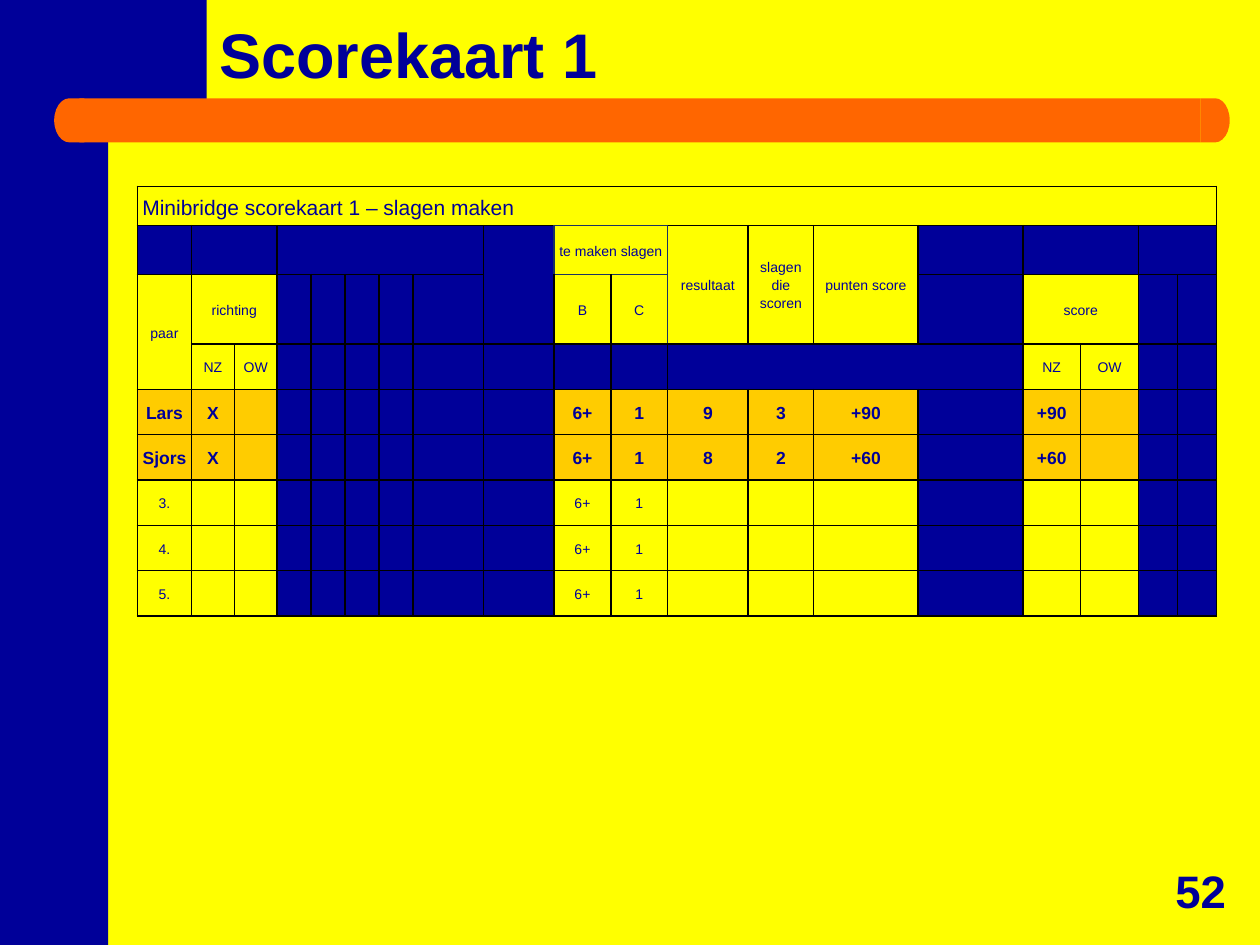
from lxml.etree import fromstring
from pptx import Presentation
from pptx.dml.color import RGBColor
from pptx.enum.shapes import MSO_SHAPE as Shape
from pptx.enum.text import MSO_ANCHOR as Anchor, MSO_AUTO_SIZE as Fit, PP_ALIGN as Align
from pptx.oxml.ns import nsdecls
from pptx.util import Inches, Pt

NAVY = RGBColor(0x00, 0x00, 0x99)
YELLOW = RGBColor(0xFF, 0xFF, 0x00)
ORANGE = RGBColor(0xFF, 0x66, 0x00)
GOLD = RGBColor(0xFF, 0xCC, 0x00)
BLACK = RGBColor(0x00, 0x00, 0x00)
SLATE = RGBColor(0x1A, 0x33, 0x61)

WIDTHS = [0.43] + [0.34] * 2 + [0.27] * 4 + [0.56] * 2 + [0.45] * 2 + [
    0.64, 0.52, 0.83, 0.83, 0.46, 0.46, 0.31, 0.31]
HEIGHTS = [0.31, 0.39, 0.55] + [0.36] * 6
SPANS = [(0, 0, 0, 18), (1, 1, 1, 2), (1, 3, 1, 7), (1, 8, 2, 8),
         (1, 9, 1, 10), (1, 11, 2, 11), (1, 12, 2, 12), (1, 13, 2, 13),
         (1, 17, 1, 18), (2, 0, 3, 0), (2, 1, 2, 2), (2, 15, 2, 16)]
ROWS = [
    {0: "Minibridge scorekaart 1 – slagen maken"},
    {9: "te maken slagen", 11: "resultaat", 12: "slagen die scoren", 13: "punten score"},
    {0: "paar", 1: "richting", 9: "B", 10: "C", 15: "score"},
    {1: "NZ", 2: "OW", 15: "NZ", 16: "OW"},
    {0: "Lars", 1: "X", 9: "6+", 10: "1", 11: "9", 12: "3", 13: "+90", 15: "+90"},
    {0: "Sjors", 1: "X", 9: "6+", 10: "1", 11: "8", 12: "2", 13: "+60", 15: "+60"},
] + [{0: f"{num}.", 9: "6+", 10: "1"} for num in (3, 4, 5)]
PLAYED = (4, 5)
DARK = {3, 4, 5, 6, 7, 8, 14, 17, 18}
EXTRA = {1: {0, 1, 2, 15, 16}, 3: {9, 10, 11, 12, 13}}
OPEN = {(1, 15): "R", (1, 16): "L", (3, 11): "R", (3, 12): "LR",
        (3, 13): "LR", (3, 14): "L"}
SOFT = {(1, 8): "R", (1, 9): "LRTB", (1, 10): "RTB", (1, 11): "L",
        (2, 9): "T", (2, 10): "T"}


def style(para, size, bold=False, align=Align.LEFT, space=None):
    """Format one paragraph."""
    para.alignment = align
    para.line_spacing = space
    font = para.font
    font.name, font.size, font.bold = "Arial", Pt(size), bold
    font.color.rgb = NAVY


def paint(shape, color):
    """Fill a shape without line or shadow."""
    shape.shadow.inherit = False
    shape.fill.solid()
    shape.fill.fore_color.rgb = color
    shape.line.fill.background()


def add_block(slide, kind, box, color, turn=0):
    """Add a plain preset shape."""
    shape = slide.shapes.add_shape(kind, *map(Inches, box))
    shape.rotation = turn
    paint(shape, color)


def add_frame(slide):
    """Draw the navy corner and the orange bar."""
    add_block(slide, Shape.RECTANGLE, (0, 0, 0.86, 7.5), NAVY)
    edge = [(1.64, 0.83), (0.58, 0.84), (0.52, 0.85), (0.48, 0.92),
            (0.44, 1.04), (0.43, 1.28), (0.28, 1.28), (0.28, 0)]
    pen = slide.shapes.build_freeform(Inches(1.64), 0)
    pen.add_line_segments([(Inches(x), Inches(y)) for x, y in edge])
    paint(pen.convert_to_shape(), NAVY)
    add_block(slide, Shape.RECTANGLE, (0.63, 0.78, 8.9, 0.35), ORANGE)
    add_block(slide, Shape.FLOWCHART_DELAY, (0.43, 0.78, 0.24, 0.35), ORANGE, 180)
    add_block(slide, Shape.FLOWCHART_DELAY, (9.53, 0.78, 0.23, 0.35), ORANGE)


def add_title(slide, text):
    """Place and format the title."""
    title = slide.shapes.title
    title.left, title.top, title.width, title.height = map(Inches, (1.64, 0, 7.89, 0.78))
    frame = title.text_frame
    frame.text = text
    frame.auto_size, frame.vertical_anchor = Fit.NONE, Anchor.BOTTOM
    style(frame.paragraphs[0], 36, True, space=0.9)


def add_number(slide, text):
    """Add the page number."""
    frame = slide.shapes.add_textbox(*map(Inches, (9.06, 6.8, 0.94, 0.53))).text_frame
    frame.text = text
    frame.word_wrap, frame.vertical_anchor = True, Anchor.BOTTOM
    style(frame.paragraphs[0], 26, True, Align.CENTER)


def set_edges(cell, spot):
    """Draw the four borders of a cell."""
    props = cell._tc.get_or_add_tcPr()
    for i, side in enumerate("LRTB"):
        color = SLATE if side in SOFT.get(spot, "") else BLACK
        ink = f'<a:solidFill><a:srgbClr val="{color}"/></a:solidFill>'
        if side in OPEN.get(spot, ""):
            ink = "<a:noFill/>"
        props.insert(i, fromstring(
            f'<a:ln{side} {nsdecls("a")} w="12700">{ink}</a:ln{side}>'))


def set_cell(cell, row, col):
    """Give a cell its text, fill and borders."""
    cell.margin_left = cell.margin_right = Inches(0.04)
    cell.margin_top = cell.margin_bottom = 0
    cell.vertical_anchor = Anchor.MIDDLE
    cell.text = ROWS[row].get(col, "")
    played = row in PLAYED
    size = 12 if row == 0 else 10 if played else 8
    align = Align.CENTER if row else Align.LEFT
    style(cell.text_frame.paragraphs[0], size, played, align, 1.15)
    if row and col in DARK | EXTRA.get(row, set()):
        cell.fill.solid()
        cell.fill.fore_color.rgb = NAVY
    elif played:
        cell.fill.solid()
        cell.fill.fore_color.rgb = GOLD
    else:
        cell.fill.background()
    set_edges(cell, (row, col))


def add_card(slide):
    """Add the score card table."""
    table = slide.shapes.add_table(
        len(HEIGHTS), len(WIDTHS), Inches(1.09), Inches(1.48),
        Inches(8.59), Inches(3.44)).table
    table.first_row = table.horz_banding = False
    for col, width in zip(table.columns, WIDTHS):
        col.width = Inches(width)
    for row, height in enumerate(HEIGHTS):
        table.rows[row].height = Inches(height)
        for col in range(len(WIDTHS)):
            set_cell(table.cell(row, col), row, col)
    for top, left, end, right in SPANS:
        table.cell(top, left).merge(table.cell(end, right))


def main():
    """Build the slide and save it."""
    deck = Presentation()
    deck.slide_width, deck.slide_height = Inches(10), Inches(7.5)
    slide = deck.slides.add_slide(deck.slide_layouts[5])
    slide.background.fill.solid()
    slide.background.fill.fore_color.rgb = YELLOW
    add_frame(slide)
    add_title(slide, "Scorekaart 1")
    add_number(slide, "52")
    add_card(slide)
    deck.save("out.pptx")


if __name__ == "__main__":
    main()
